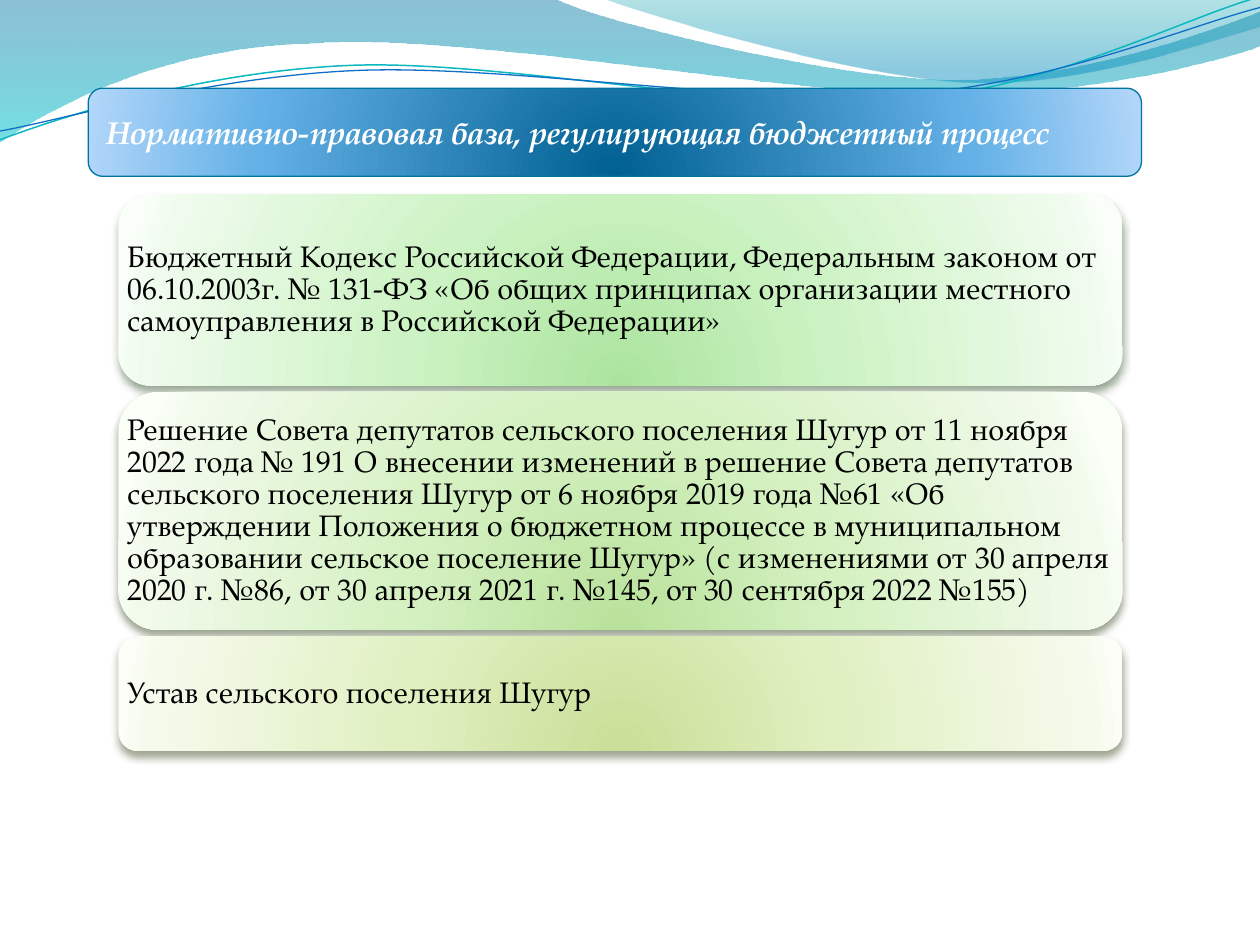
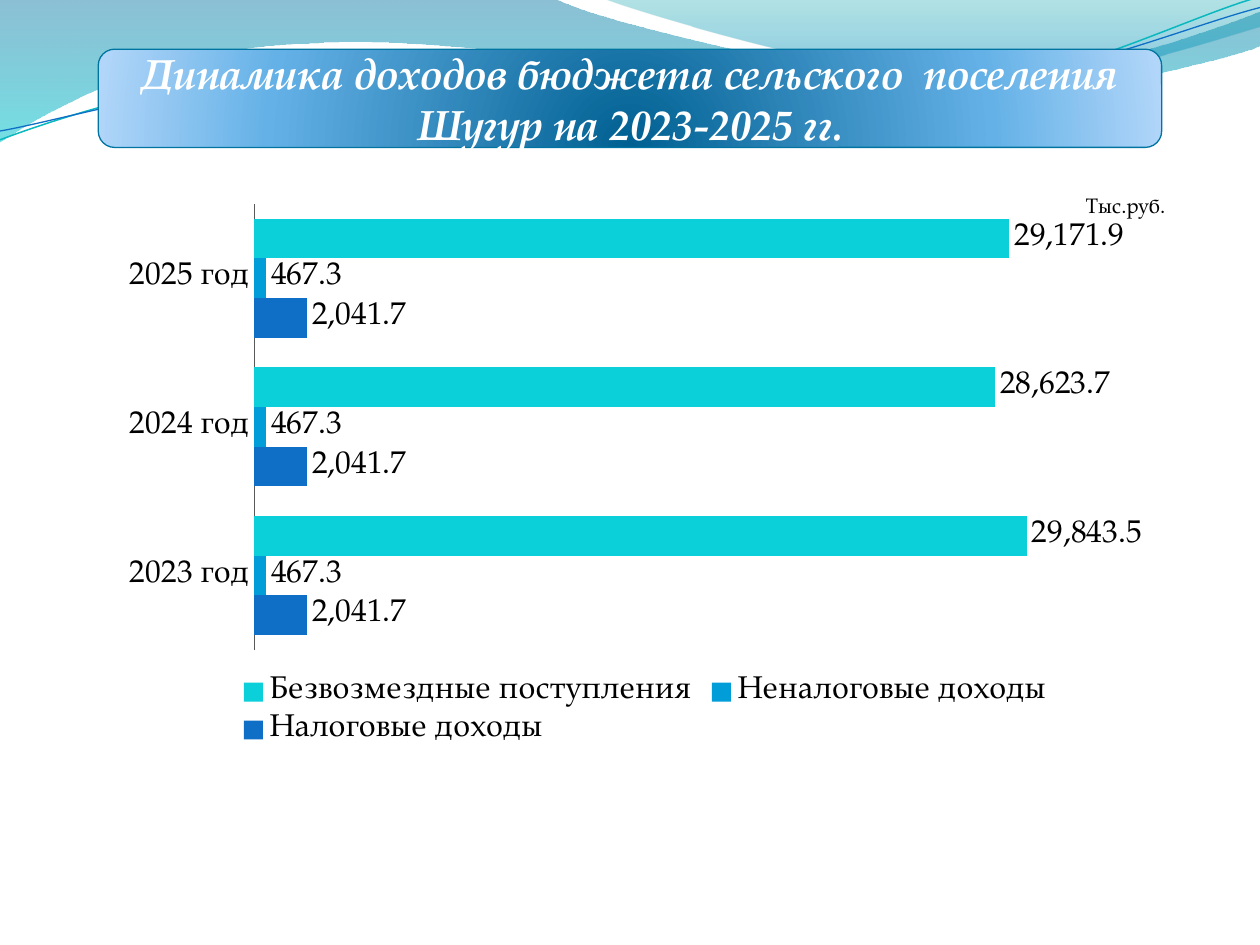
from pptx import Presentation
from pptx.chart.data import CategoryChartData
from pptx.dml.color import RGBColor
from pptx.enum.chart import (XL_CHART_TYPE, XL_LABEL_POSITION as LabelPos,
                             XL_LEGEND_POSITION as LegendPos, XL_TICK_MARK as Tick)
from pptx.enum.shapes import MSO_SHAPE
from pptx.enum.text import MSO_ANCHOR, MSO_AUTO_SIZE, PP_ALIGN
from pptx.oxml import parse_xml
from pptx.oxml.ns import nsdecls, qn
from pptx.util import Inches, Pt

FONT = "TeX Gyre Pagella"
NUMBER_FORMAT = "#,##0.0"
TITLE_ONLY = 5

BLACK = RGBColor(0x00, 0x00, 0x00)
WHITE = RGBColor(0xFF, 0xFF, 0xFF)
AXIS_GRAY = RGBColor(0x59, 0x59, 0x59)
BLUE = RGBColor(0x0F, 0x6F, 0xC6)
SKY = RGBColor(0x00, 0x9D, 0xD9)
TURQUOISE = RGBColor(0x0B, 0xD0, 0xD9)
TEAL_LINE = RGBColor(0x0A, 0xB8, 0xBF)
BANNER_LINE = RGBColor(0x00, 0x74, 0xA1)


def stops(positions, colours, opacities=(100, 100, 100, 100)):
    return list(zip(positions, map(RGBColor.from_string, colours), opacities))


BANNER_STOPS = stops((0, 68, 100), ("006091", "64B1E7", "B1D6F9"))
CARD_POSITIONS = (0, 43, 93, 100)

# Each wave: start point, then segments of one point (line) or three (curve).
WAVE_BANDS = [
    ((0, 0),
     [[(4.4, -0.01)],
      [(4.76, 0.17), (6.64, 0.63), (7.58, 0.63)],
      [(8.53, 0.63), (9.58, 0.26), (10, 0.09)],
      [(10.01, 0.36)],
      [(9.83, 0.44), (8.7, 0.76), (7.46, 0.75)],
      [(6.22, 0.75), (3.82, 0.28), (2.57, 0.34)],
      [(1.29, 0.36), (0.46, 0.83), (-0.01, 1.13)],
      [(0, 0)]],
     stops((0, 100), ("0074A1", "00C6CF"), (45, 55))),
    ((4.79, -0.01),
     [[(5.09, 0.11), (6.82, 0.62), (7.69, 0.65)],
      [(8.56, 0.69), (9.61, 0.32), (10, 0.21)],
      [(10, 0)],
      [(4.79, -0.01)]],
     stops((0, 80), ("00A1A9", "008BBF"), (30, 45))),
]
WAVE_LINES = [
    ((0, 1.11),
     [[(0.48, 0.93), (1.58, 0.57), (2.77, 0.52)],
      [(3.95, 0.47), (5.93, 0.89), (7.13, 0.8)],
      [(8.33, 0.71), (9.38, 0.15), (9.98, -0.02)]],
     TEAL_LINE, 0.85),
    ((0, 1.04),
     [[(0.47, 0.96), (1.64, 0.61), (2.83, 0.56)],
      [(4.03, 0.51), (5.97, 0.84), (7.17, 0.75)],
      [(8.36, 0.67), (9.41, 0.21), (10, 0.06)]],
     BLUE, 0.75),
]

LAWS = [
    ("Бюджетный Кодекс Российской Федерации, Федеральным законом от 06.10.2003г. "
     "№ 131-ФЗ «Об общих принципах организации местного самоуправления в "
     "Российской Федерации»",
     1.52, ("ACE49F", "CDF3C4", "EFFBED", "F9FFF8"), "2B4821"),
    ("Решение Совета депутатов сельского поселения Шугур от 11 ноября 2022 года "
     "№ 191 О внесении изменений в решение Совета депутатов сельского поселения "
     "Шугур от 6 ноября 2019 года №61 «Об утверждении Положения о бюджетном "
     "процессе в муниципальном образовании сельское поселение Шугур» "
     "(с изменениями от 30 апреля 2020 г. №86, от 30 апреля 2021 г. №145, "
     "от 30 сентября 2022 №155)",
     1.89, ("B9E19B", "D5F1C2", "F2FAEC", "FAFFF8"), "32461D"),
    ("Устав сельского поселения Шугур",
     0.91, ("C9DF97", "E0F0C1", "F5FAEC", "FCFEF8"), "3A4519"),
]

YEARS = ["2023 год", "2024 год", "2025 год"]
INCOME = [
    ("Налоговые доходы", (2041.7, 2041.7, 2041.7), BLUE),
    ("Неналоговые доходы", (467.3, 467.3, 467.3), SKY),
    ("Безвозмездные поступления", (29843.5, 28623.7, 29171.9), TURQUOISE),
]


def fill_gradient(shape, gradient_stops, radial=True):
    """Fill with a glow from the lower centre, or else from top to bottom."""
    direction = ('<a:path path="circle"><a:fillToRect l="50000" t="130000" '
                 'r="50000" b="-30000"/></a:path>' if radial
                 else '<a:lin ang="5400000" scaled="0"/>')
    marks = "".join(
        f'<a:gs pos="{position * 1000}"><a:srgbClr val="{colour}">'
        f'<a:alpha val="{opacity * 1000}"/></a:srgbClr></a:gs>'
        for position, colour, opacity in gradient_stops)
    shape.fill.background()
    properties = shape.element.spPr
    properties.replace(properties.find(qn("a:noFill")), parse_xml(
        f'<a:gradFill {nsdecls("a")} rotWithShape="1"><a:gsLst>{marks}</a:gsLst>'
        f'{direction}</a:gradFill>'))


def add_shadow(shape, colour):
    shape.shadow.inherit = False
    shape.element.spPr.find(qn("a:effectLst")).append(parse_xml(
        f'<a:outerShdw {nsdecls("a")} blurRad="{Pt(4.5)}" dist="{Pt(3)}" '
        f'dir="5400000" algn="ctr" rotWithShape="0"><a:srgbClr val="{colour}">'
        '<a:alpha val="48000"/></a:srgbClr></a:outerShdw>'))


def write(paragraph, text, size, colour=BLACK, emphasis=False):
    run = paragraph.add_run()
    run.text = text
    run.font.name = FONT
    run.font.size = Pt(size)
    run.font.color.rgb = colour
    run.font.bold = run.font.italic = emphasis


def add_wave(slide, start, segments, closed):
    """Build the outline point by point, then bend each three-point segment."""
    builder = slide.shapes.build_freeform(Inches(start[0]), Inches(start[1]))
    builder.add_line_segments(
        [(Inches(x), Inches(y)) for segment in segments for x, y in segment],
        close=closed)
    wave = builder.convert_to_shape()
    wave.shadow.inherit = False

    steps = iter(list(wave.element.iter(qn("a:lnTo"))))
    for segment in segments:
        first, *others = [next(steps) for _ in segment]
        if others:
            curve = parse_xml(f'<a:cubicBezTo {nsdecls("a")}/>')
            first.addprevious(curve)
            for step in (first, *others):
                curve.append(step[0])
                step.getparent().remove(step)
    return wave


def add_waves_to_layout(slide):
    """Draw the waves, then hand them to the layout that all slides share."""
    waves = []
    for start, segments, band_stops in WAVE_BANDS:
        band = add_wave(slide, start, segments, closed=True)
        fill_gradient(band, band_stops, radial=False)
        band.line.fill.background()
        waves.append(band)
    for start, segments, colour, width in WAVE_LINES:
        strand = add_wave(slide, start, segments, closed=False)
        strand.fill.background()
        strand.line.color.rgb = colour
        strand.line.width = Pt(width)
        waves.append(strand)
    for wave in waves:
        slide.slide_layout.shapes.element.append(wave.element)


def add_banner(slide, text, left, top, width, height, size, align):
    """Lay the title over a rounded blue banner."""
    box = [Inches(length) for length in (left, top, width, height)]
    banner = slide.shapes.add_shape(MSO_SHAPE.ROUNDED_RECTANGLE, *box)
    fill_gradient(banner, BANNER_STOPS)
    banner.line.color.rgb = BANNER_LINE
    banner.line.width = Pt(0.75)
    banner.shadow.inherit = False

    title = slide.shapes.title
    slide.shapes.element.append(title.element)
    title.left, title.top, title.width, title.height = box
    frame = title.text_frame
    frame.word_wrap = True
    frame.auto_size = MSO_AUTO_SIZE.NONE
    frame.vertical_anchor = MSO_ANCHOR.MIDDLE
    frame.margin_left = frame.margin_right = Inches(0.14)
    frame.paragraphs[0].alignment = align
    write(frame.paragraphs[0], text, size, WHITE, emphasis=True)


def add_law_cards(slide, left, top, width, gap=0.05):
    for text, height, colours, shadow in LAWS:
        box = [Inches(length) for length in (left, top, width, height)]
        card = slide.shapes.add_shape(MSO_SHAPE.ROUNDED_RECTANGLE, *box)
        fill_gradient(card, stops(CARD_POSITIONS, colours))
        card.line.fill.background()
        add_shadow(card, shadow)

        frame = slide.shapes.add_textbox(*box).text_frame
        frame.word_wrap = True
        frame.vertical_anchor = MSO_ANCHOR.MIDDLE
        frame.margin_left = frame.margin_right = Inches(0.07)
        frame.margin_top = frame.margin_bottom = Inches(0.07)
        frame.paragraphs[0].line_spacing = 0.9
        write(frame.paragraphs[0], text, 17)
        top += height + gap


def add_income_chart(slide, left, top, width, height):
    data = CategoryChartData(number_format=NUMBER_FORMAT)
    data.categories = YEARS
    for name, values, _ in INCOME:
        data.add_series(name, values)
    chart = slide.shapes.add_chart(
        XL_CHART_TYPE.BAR_CLUSTERED, Inches(left), Inches(top),
        Inches(width), Inches(height), data).chart
    chart.has_title = False
    chart.font.name = FONT
    chart.font.size = Pt(18)
    chart.font.color.rgb = BLACK
    chart.has_legend = True
    chart.legend.position = LegendPos.BOTTOM
    chart.legend.include_in_layout = False

    years = chart.category_axis
    years.major_tick_mark = years.minor_tick_mark = Tick.NONE
    years.format.line.color.rgb = AXIS_GRAY
    chart.value_axis.visible = False
    chart.value_axis.has_major_gridlines = False

    plot = chart.plots[0]
    plot.gap_width = 75
    plot.vary_by_categories = False
    for series, (_, _, colour) in zip(plot.series, INCOME):
        series.format.fill.solid()
        series.format.fill.fore_color.rgb = colour
        labels = series.data_labels
        labels.show_value = True
        labels.number_format = NUMBER_FORMAT
        labels.number_format_is_linked = False
        labels.position = LabelPos.OUTSIDE_END


def add_unit_note(slide, left, top, width, height):
    frame = slide.shapes.add_textbox(
        Inches(left), Inches(top), Inches(width), Inches(height)).text_frame
    frame.word_wrap = False
    frame.auto_size = MSO_AUTO_SIZE.SHAPE_TO_FIT_TEXT
    write(frame.paragraphs[0], "Тыс.руб.", 12)


def build_law_slide(slide):
    add_banner(slide, "Нормативно-правовая база, регулирующая бюджетный процесс",
               0.7, 0.7, 8.36, 0.7, 18, PP_ALIGN.LEFT)
    add_law_cards(slide, 0.94, 1.54, 7.97)


def build_income_slide(slide):
    add_banner(slide, "Динамика доходов бюджета сельского  поселения Шугур "
               "на 2023-2025 гг.", 0.78, 0.39, 8.44, 0.78, 24, PP_ALIGN.CENTER)
    add_income_chart(slide, 0.86, 1.53, 8.52, 4.44)
    add_unit_note(slide, 8.52, 1.48, 0.84, 0.3)


def main():
    deck = Presentation()
    deck.slide_width, deck.slide_height = Inches(10), Inches(7.5)
    layout = deck.slide_layouts[TITLE_ONLY]
    law_slide, income_slide = (deck.slides.add_slide(layout) for _ in range(2))
    add_waves_to_layout(law_slide)
    build_law_slide(law_slide)
    build_income_slide(income_slide)
    deck.save("out.pptx")


if __name__ == "__main__":
    main()
